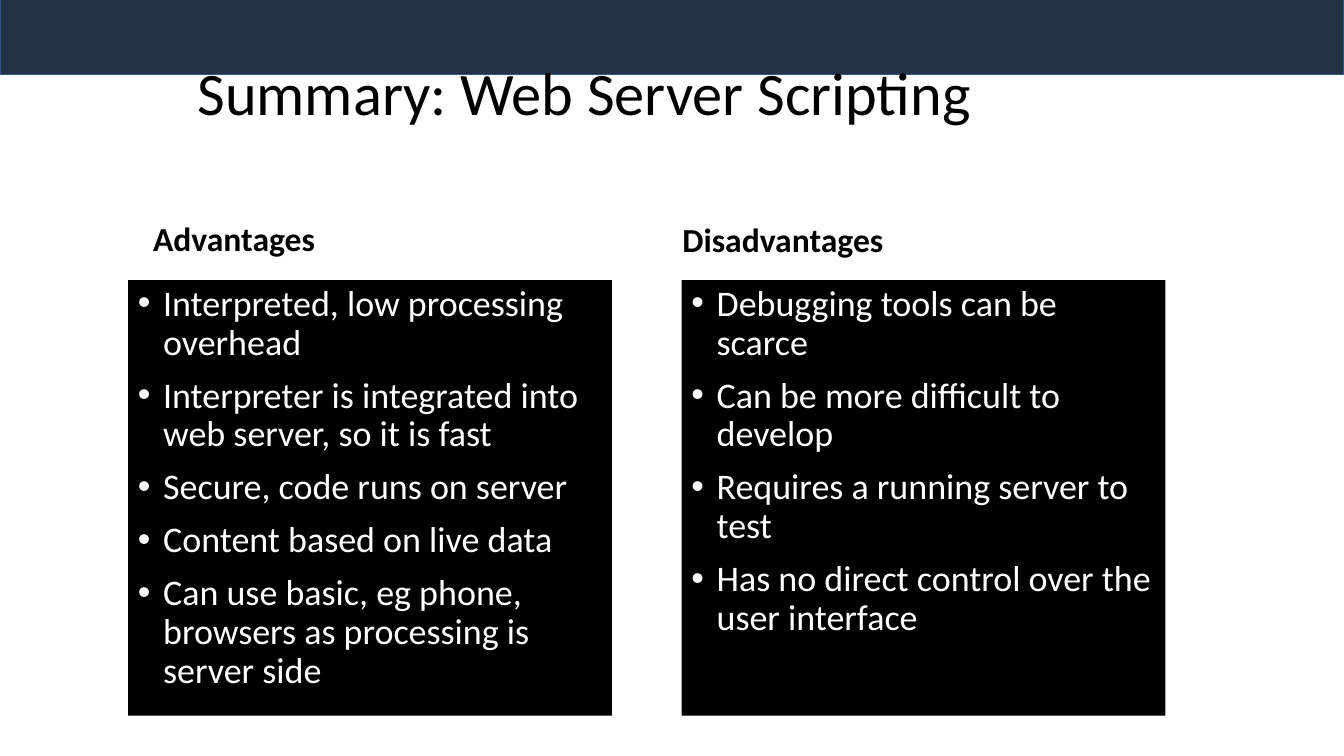
from pptx import Presentation
from pptx.dml.color import RGBColor
from pptx.enum import shapes, text
from pptx.oxml import parse_xml
from pptx.oxml.ns import nsdecls
from pptx.util import Inches, Pt

BLACK = RGBColor(0x00, 0x00, 0x00)
WHITE = RGBColor(0xFF, 0xFF, 0xFF)
NAVY = RGBColor(0x22, 0x33, 0x46)
BLUE = RGBColor(0x32, 0x54, 0x91)
FONT = "Calibri"

TITLE = "Summary: Web Server Scripting"
# heading, heading left and top, panel left, points
COLUMNS = [
    ("Advantages", 1.42, 1.86, 1.27, [
        "Interpreted, low processing overhead",
        "Interpreter is integrated into web server, so it is fast",
        "Secure, code runs on server",
        "Content based on live data",
        "Can use basic, eg phone, browsers as processing is server side",
    ]),
    ("Disadvantages", 6.67, 1.87, 6.76, [
        "Debugging tools can be scarce",
        "Can be more difficult to develop",
        "Requires a running server to test",
        "Has no direct control over the user interface",
    ]),
]
SLIDE_W, SLIDE_H = 13.33, 7.5
BANNER_TOP, BANNER_H = -0.04, 0.78
HEADING_W, HEADING_H = 4.89, 0.76
PANEL_TOP, PANEL_W, PANEL_H = 2.78, 4.8, 4.32
BULLET_INDENT = 0.25


def add_bullet(paragraph):
    props = paragraph._p.get_or_add_pPr()
    props.set("marL", str(Inches(BULLET_INDENT)))
    props.set("indent", str(-Inches(BULLET_INDENT)))
    props.append(parse_xml(f'<a:buFont {nsdecls("a")} typeface="Arial"/>'))
    props.append(parse_xml(f'<a:buChar {nsdecls("a")} char="•"/>'))


def add_text(slide, lines, left, top, width, height, size, color=BLACK,
             bold=False, anchor=text.MSO_ANCHOR.TOP, bullets=False, fill=None):
    box = slide.shapes.add_textbox(
        Inches(left), Inches(top), Inches(width), Inches(height))
    if fill is not None:
        box.fill.solid()
        box.fill.fore_color.rgb = fill
    frame = box.text_frame
    frame.word_wrap = True
    frame.vertical_anchor = anchor
    for index, line in enumerate(lines):
        paragraph = frame.add_paragraph() if index else frame.paragraphs[0]
        if bullets:
            add_bullet(paragraph)
        paragraph.line_spacing = 0.9
        if index:
            paragraph.space_before = Pt(10.1)
        run = paragraph.add_run()
        run.text = line
        run.font.name = FONT
        run.font.size = Pt(size)
        run.font.bold = bold
        run.font.color.rgb = color


def main():
    prs = Presentation()
    prs.slide_width, prs.slide_height = Inches(SLIDE_W), Inches(SLIDE_H)
    slide = prs.slides.add_slide(prs.slide_layouts[6])

    banner = slide.shapes.add_shape(
        shapes.MSO_SHAPE.RECTANGLE,
        0, Inches(BANNER_TOP), Inches(SLIDE_W), Inches(BANNER_H))
    banner.shadow.inherit = False
    banner.fill.solid()
    banner.fill.fore_color.rgb = NAVY
    banner.line.color.rgb = BLUE
    banner.line.width = Pt(1)

    add_text(slide, [TITLE], 1.86, 0.33, 9.61, 1.25, 43.1,
             anchor=text.MSO_ANCHOR.MIDDLE)
    for heading, heading_left, heading_top, panel_left, points in COLUMNS:
        add_text(slide, [heading], heading_left, heading_top, HEADING_W, HEADING_H,
                 24, bold=True, anchor=text.MSO_ANCHOR.BOTTOM)
        add_text(slide, points, panel_left, PANEL_TOP, PANEL_W, PANEL_H,
                 25.7, color=WHITE, bullets=True, fill=BLACK)

    prs.save("out.pptx")


if __name__ == "__main__":
    main()
